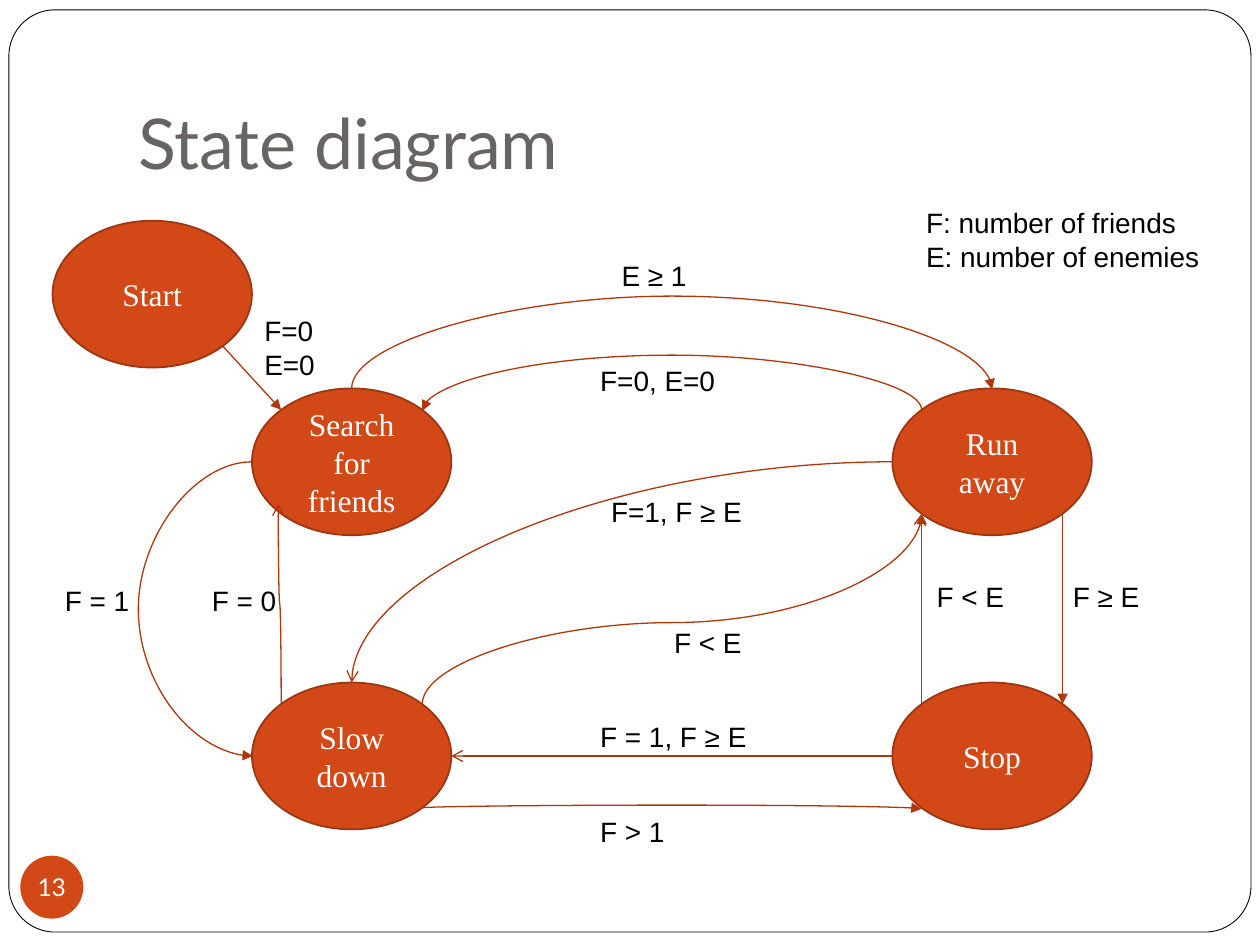
from dataclasses import dataclass
from math import cos, pi, sin
from typing import Optional

from lxml import etree
from pptx import Presentation
from pptx import util as u
from pptx.dml.color import RGBColor
from pptx.enum import shapes, text
from pptx.oxml.ns import qn

HUE = {"paper": "FFFFFF", "ink": "000000", "title": "696464",
       "state": "D34817", "rim": "9C3511", "edge": "B1360B"}
WIDE, HIGH = 4.02, 2.96
TOP, LEFT, LOW_LEFT, LOW_RIGHT, RIGHT, TOP_RIGHT, TOP_LEFT = 0, 2, 3, 5, 6, 7, 1
TINY = 0.02


@dataclass
class State:
    name: str
    x: float
    y: float

    def site(self, spot: int) -> tuple[float, float]:
        turn = pi / 2 + spot * pi / 4
        return (self.x + WIDE / 2 * (1 + cos(turn)),
                self.y + HIGH / 2 * (1 - sin(turn)))


@dataclass
class Edge:
    src: str
    out: int
    dst: str
    into: int
    form: str = "curvedConnector3"
    upright: bool = True
    bend: Optional[float] = None
    tip: str = "triangle"
    end: Optional[tuple[float, float]] = None


@dataclass
class Label:
    words: str
    x: float
    y: float
    w: float = 2.12
    h: float = 0.94


COL_A, COL_B, ROW_A, ROW_B = 5.08, 17.99, 7.83, 13.76
STATES = [
    State("Start", 1.06, 4.45),
    State("Search for friends", COL_A, ROW_A),
    State("Stop", COL_B, ROW_B),
    State("Slow down", COL_A, ROW_B),
    State("Run away", COL_B, ROW_A),
]
BY_NAME = {s.name: s for s in STATES}
SEEK, RUN, SLOW, STOP = "Search for friends", "Run away", "Slow down", "Stop"
EDGES = [
    Edge("Start", LOW_RIGHT, SEEK, TOP_LEFT, form="line"),
    Edge(SLOW, LOW_RIGHT, STOP, LOW_LEFT, bend=16.23),
    Edge(SEEK, LEFT, SLOW, LEFT, upright=False, bend=2.79),
    Edge(SEEK, TOP, RUN, TOP, bend=5.97),
    Edge(RUN, LOW_RIGHT, STOP, TOP_RIGHT),
    Edge(STOP, TOP_LEFT, RUN, LOW_LEFT),
    Edge(RUN, TOP_LEFT, SEEK, TOP_RIGHT, bend=7.16),
    Edge(STOP, LEFT, SLOW, RIGHT, upright=False, tip="arrow"),
    Edge(SLOW, TOP_LEFT, SEEK, LOW_LEFT, tip="arrow", end=(5.61, 10.16)),
    Edge(SLOW, TOP_RIGHT, RUN, LOW_LEFT, bend=12.55, tip="arrow"),
    Edge(RUN, LEFT, SLOW, TOP, form="curvedConnector2", upright=False, tip="arrow"),
]
LABELS = [
    Label("F > 1", 11.85, 16.3),
    Label("F = 1", 1.06, 11.64),
    Label("F=0 E=0", 5.08, 6.2, h=1.62),
    Label("F: number of friends\nE: number of enemies", 18.42, 4.02, 6.14, 1.62),
    Label("E ≥ 1", 12.28, 5.08, 5.5),
    Label("F ≥ E", 21.38, 11.55),
    Label("F < E", 18.63, 11.55),
    Label("F=0, E=0", 11.85, 7.2, 3.6),
    Label("F = 1, F ≥ E", 11.85, 14.39, 4.66),
    Label("F = 0", 4.02, 11.64),
    Label("F < E", 13.34, 12.49),
    Label("F=1, F ≥ E", 12.07, 9.84, 3.6),
]


def tint(key: str) -> RGBColor:
    return RGBColor.from_string(HUE[key])


def write(shape, words: str, *, font: str = "Arial", size: float = 16,
          hue: str = "ink", align=text.PP_ALIGN.LEFT,
          anchor=text.MSO_ANCHOR.TOP, pad: Optional[float] = None,
          wrap: bool = True) -> None:
    frame = shape.text_frame
    frame.text = words
    frame.word_wrap = wrap
    frame.vertical_anchor = anchor
    if pad is not None:
        frame.margin_left = frame.margin_right = u.Cm(pad)
        frame.margin_top = frame.margin_bottom = u.Cm(pad)
    for para in frame.paragraphs:
        para.alignment = align
        for run in para.runs:
            run.font.name = font
            run.font.size = u.Pt(size)
            run.font.color.rgb = tint(hue)


def block(slide, kind, x: float, y: float, w: float, h: float,
          fill: str, rim: Optional[str] = None, weight: float = 1):
    shape = slide.shapes.add_shape(kind, u.Cm(x), u.Cm(y), u.Cm(w), u.Cm(h))
    shape.shadow.inherit = False
    shape.fill.solid()
    shape.fill.fore_color.rgb = tint(fill)
    if rim:
        shape.line.color.rgb = tint(rim)
        shape.line.width = u.Pt(weight)
    else:
        shape.line.fill.background()
    return shape


def bend_line(line, edge: Edge, x1: float, y1: float, x2: float, y2: float) -> None:
    start, stop = (y1, y2) if edge.upright else (x1, x2)
    if abs(stop - start) < TINY:
        stop = start + TINY
    dx, dy = (x2 - x1, stop - start) if edge.upright else (stop - start, y2 - y1)
    w, h = (abs(dy), abs(dx)) if edge.upright else (abs(dx), abs(dy))
    line.left, line.top = u.Cm(x1 + dx / 2 - w / 2), u.Cm(y1 + dy / 2 - h / 2)
    line.width, line.height = u.Cm(w), u.Cm(h)
    flips = (dy < 0, dx > 0) if edge.upright else (dx < 0, dy < 0)
    frame = line.element.spPr.find(qn("a:xfrm"))
    frame.set("rot", "5400000" if edge.upright else "0")
    for key, flip in zip(("flipH", "flipV"), flips):
        frame.set(key, str(int(flip)))
    shape = line.element.spPr.find(qn("a:prstGeom"))
    shape.set("prst", edge.form)
    if edge.form == "curvedConnector3":
        mid = (start + stop) / 2 if edge.bend is None else edge.bend
        ratio = round((mid - start) / (stop - start) * 100000)
        etree.SubElement(shape.find(qn("a:avLst")), qn("a:gd"),
                         name="adj1", fmla=f"val {ratio}")


def link(slide, edge: Edge, ovals: dict) -> None:
    x1, y1 = BY_NAME[edge.src].site(edge.out)
    x2, y2 = edge.end or BY_NAME[edge.dst].site(edge.into)
    kind = shapes.MSO_CONNECTOR.STRAIGHT if edge.form == "line" else shapes.MSO_CONNECTOR.CURVE
    line = slide.shapes.add_connector(kind, u.Cm(x1), u.Cm(y1), u.Cm(x2), u.Cm(y2))
    if edge.form != "line":
        bend_line(line, edge, x1, y1, x2, y2)
    line.line.color.rgb = tint("edge")
    line.line.width = u.Pt(0.75)
    etree.SubElement(line.line._get_or_add_ln(), qn("a:tailEnd"), type=edge.tip)
    etree.SubElement(line.element.spPr, qn("a:effectLst"))
    joins = [("a:stCxn", edge.src, edge.out)]
    if not edge.end:
        joins.append(("a:endCxn", edge.dst, edge.into))
    props = line.element.find(".//" + qn("p:cNvCxnSpPr"))
    for tag, name, spot in joins:
        etree.SubElement(props, qn(tag), id=str(ovals[name].shape_id), idx=str(spot))


def main() -> None:
    deck = Presentation()
    deck.slide_width, deck.slide_height = u.Cm(25.4), u.Cm(19.05)
    slide = deck.slides.add_slide(deck.slide_layouts[5])
    oval = shapes.MSO_SHAPE.OVAL
    mid = {"align": text.PP_ALIGN.CENTER, "anchor": text.MSO_ANCHOR.MIDDLE, "hue": "paper"}

    frame = block(slide, shapes.MSO_SHAPE.ROUNDED_RECTANGLE,
                  0.18, 0.2, 25.04, 18.59, "paper", "ink", 0.5)
    frame.adjustments[0] = 0.05
    slide.shapes._spTree.insert(2, frame.element)

    title = slide.shapes.title
    title.left, title.top = u.Cm(2.54), u.Cm(0.76)
    title.width, title.height = u.Cm(21.59), u.Cm(3.18)
    write(title, "State diagram", font="Lato", size=40, hue="title",
          anchor=text.MSO_ANCHOR.BOTTOM)
    title.text_frame.margin_bottom = u.Cm(0.25)

    badge = block(slide, oval, 0.41, 17.25, 1.27, 1.27, "state")
    write(badge, "13", font="Lato", size=14, pad=0, wrap=False, **mid)

    ovals = {}
    for state in STATES:
        ovals[state.name] = block(slide, oval, state.x, state.y, WIDE, HIGH, "state", "rim")
        write(ovals[state.name], state.name, font="Times New Roman", size=18, **mid)
    for edge in EDGES:
        link(slide, edge, ovals)
    for label in LABELS:
        box = slide.shapes.add_textbox(u.Cm(label.x), u.Cm(label.y), u.Cm(label.w), u.Cm(label.h))
        write(box, label.words)
    deck.save("out.pptx")


if __name__ == "__main__":
    main()
